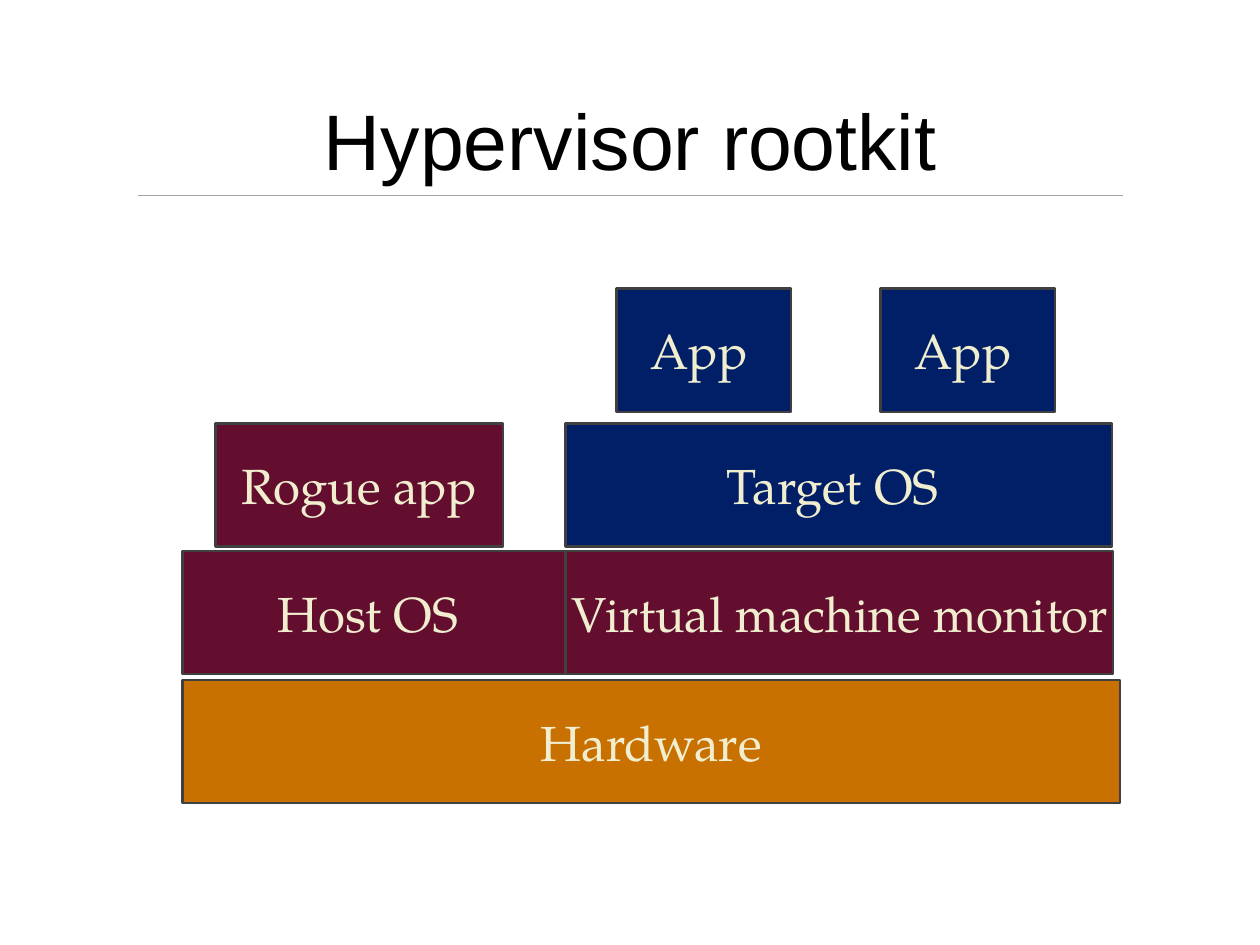
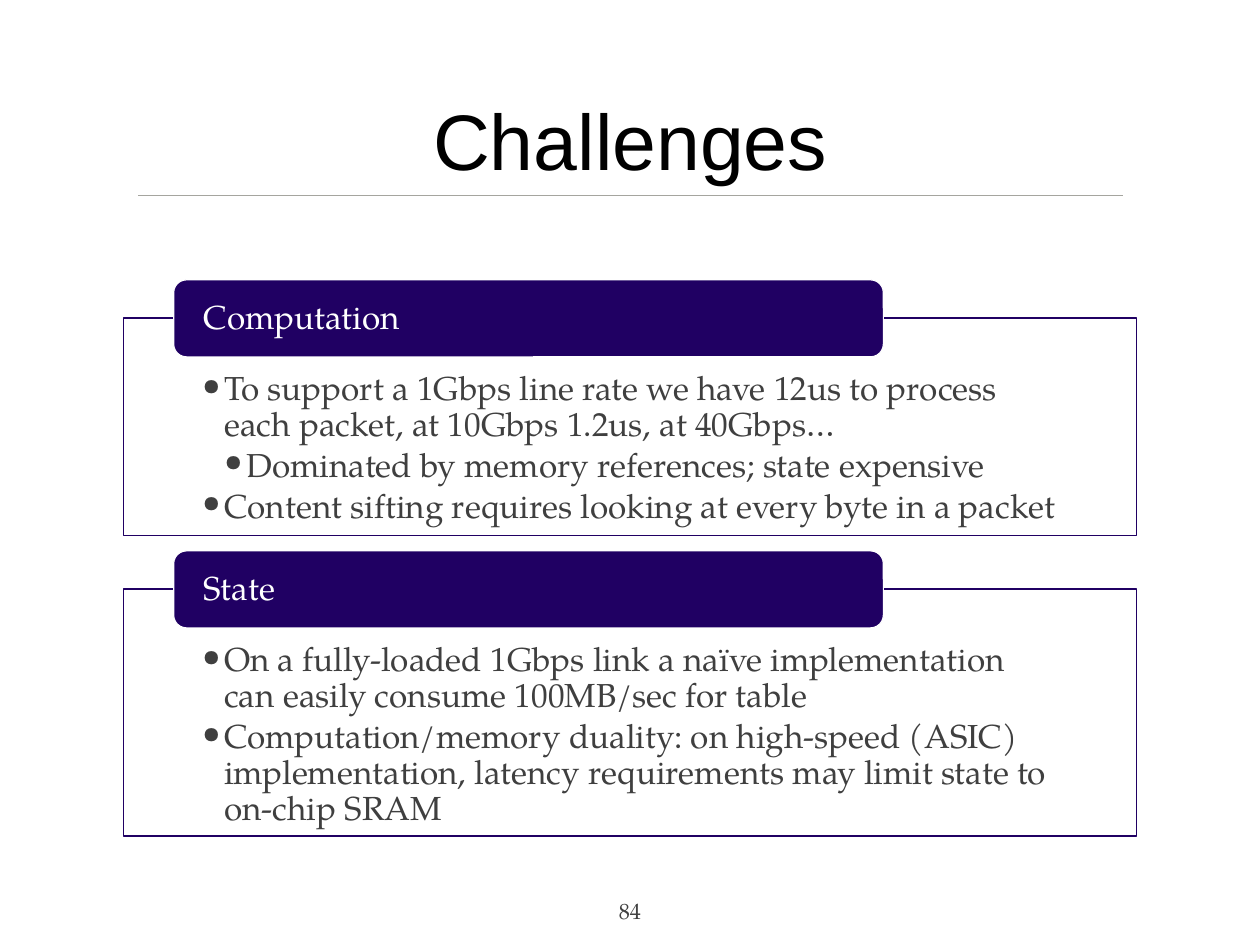
from lxml import etree
from pptx import Presentation
from pptx.dml.color import RGBColor
from pptx.enum import shapes, text
from pptx.oxml import ns
from pptx.util import Inches, Pt

SERIF = "TeX Gyre Pagella"
BLUE, MAROON, ORANGE, INDIGO = "001F67", "640E2F", "C97100", "200063"
WHITE, CREAM, GREY = "FFFFFF", "F0EECF", "404040"


def style(item, name, size, color):
    item.font.name = name
    item.font.size = Pt(size)
    item.font.color.rgb = RGBColor.from_string(color)


def add_box(s, kind, at, fill, line, line_width, insets):
    sp = s.shapes.add_shape(kind, *[Inches(v) for v in at])
    sp.shadow.inherit = False
    sp.fill.solid()
    sp.fill.fore_color.rgb = RGBColor.from_string(fill)
    sp.line.color.rgb = RGBColor.from_string(line)
    sp.line.width = Pt(line_width)
    tf = sp.text_frame
    tf.word_wrap = True
    tf.margin_left, tf.margin_top, tf.margin_right, tf.margin_bottom = [Inches(v) for v in insets]
    return tf


prs = Presentation()
prs.slide_width, prs.slide_height = Inches(14.22), Inches(10.67)
layout = prs.slide_layouts[5]

title_slides = []
for title in ["Hypervisor rootkit", "Challenges"]:
    s = prs.slides.add_slide(layout)
    rule = s.shapes.add_connector(shapes.MSO_CONNECTOR.STRAIGHT, Inches(1.56), Inches(2.21), Inches(12.67), Inches(2.21))
    rule.line.color.rgb = RGBColor.from_string("A5A59F")
    rule.line.width = Pt(1)
    etree.SubElement(rule._element.spPr, ns.qn("a:effectLst"))

    sp = s.shapes.title
    sp.left, sp.top, sp.width, sp.height = Inches(1.39), Inches(0.28), Inches(11.44), Inches(1.88)
    tf = sp.text_frame
    tf.text = title
    tf.auto_size = text.MSO_AUTO_SIZE.NONE
    tf.vertical_anchor = text.MSO_ANCHOR.BOTTOM
    tf.margin_left = tf.margin_top = tf.margin_right = tf.margin_bottom = Inches(0.06)
    p = tf.paragraphs[0]
    p.alignment = text.PP_ALIGN.CENTER
    style(p.runs[0], "Arial", 64, "000000")
    title_slides.append(s)

stack_slide, challenge_slide = title_slides

layers = [
    ("App", 6.96, 3.26, 1.97, BLUE),
    ("App", 9.94, 3.26, 1.97, BLUE),
    ("Rogue app", 2.43, 4.78, 3.25, MAROON),
    ("Target OS ", 6.38, 4.78, 6.17, BLUE),
    ("Host OS ", 2.06, 6.22, 4.32, MAROON),
    ("Virtual machine monitor ", 6.39, 6.22, 6.17, MAROON),
    ("Hardware", 2.06, 7.68, 10.58, ORANGE),
]
for label, left, top, width, fill in layers:
    tf = add_box(stack_slide, shapes.MSO_SHAPE.RECTANGLE, (left, top, width, 1.39), fill, GREY, 2, (0, 0, 0, 0))
    tf.vertical_anchor = text.MSO_ANCHOR.MIDDLE
    tf.text = label
    p = tf.paragraphs[0]
    if label == "App":
        p.alignment = text.PP_ALIGN.LEFT
        p._p.get_or_add_pPr().set("marL", str(Inches(0.38)))
    else:
        p.alignment = text.PP_ALIGN.CENTER
    style(p.runs[0], SERIF, 40, CREAM)

panels = [
    ("Computation", 3.59, 2.46, [
        (0, "To support a 1Gbps line rate we have 12us to process each packet, at 10Gbps 1.2us, at 40Gbps…"),
        (1, "Dominated by memory references; state expensive"),
        (0, "Content sifting requires looking at every byte in a packet"),
    ]),
    ("State", 6.65, 2.79, [
        (0, "On a fully-loaded 1Gbps link a naïve implementation can easily consume 100MB/sec for table"),
        (0, "Computation/memory duality: on high-speed (ASIC) implementation, latency requirements may limit state to on-chip SRAM"),
    ]),
]
for heading, top, height, points in panels:
    tf = add_box(challenge_slide, shapes.MSO_SHAPE.RECTANGLE, (1.39, top, 11.44, height), WHITE, INDIGO, 1, (0.89, 0.61, 0.89, 0.21))
    tf.vertical_anchor = text.MSO_ANCHOR.TOP
    for i, (level, point) in enumerate(points):
        p = tf.paragraphs[0] if i == 0 else tf.add_paragraph()
        p.text = point
        p.level = level
        p.alignment = text.PP_ALIGN.LEFT
        pPr = p._p.get_or_add_pPr()
        pPr.set("marL", str(Inches(0.25 * (level + 1))))
        pPr.set("indent", str(Inches(-0.25)))
        etree.SubElement(pPr, ns.qn("a:buFont")).set("typeface", SERIF)
        etree.SubElement(pPr, ns.qn("a:buChar")).set("char", "•")
        p.line_spacing = 0.9
        p.space_after = Pt(4)
        style(p.runs[0], SERIF, 27, "3F3F3F")

    tf = add_box(challenge_slide, shapes.MSO_SHAPE.ROUNDED_RECTANGLE, (1.96, top - 0.43, 8.01, 0.87), INDIGO, WHITE, 1, (0.3, 0, 0.3, 0))
    tf.vertical_anchor = text.MSO_ANCHOR.MIDDLE
    tf.text = heading
    p = tf.paragraphs[0]
    p.alignment = text.PP_ALIGN.LEFT
    p.line_spacing = 0.9
    style(p.runs[0], SERIF, 27, WHITE)

number = challenge_slide.shapes.add_textbox(Inches(6.92), Inches(10.08), Inches(0.38), Inches(0.44))
tf = number.text_frame
tf.word_wrap = False
tf.margin_left = tf.margin_right = 0
tf.text = "84"
p = tf.paragraphs[0]
p.alignment = text.PP_ALIGN.CENTER
style(p.runs[0], SERIF, 18, GREY)

prs.save("out.pptx")
